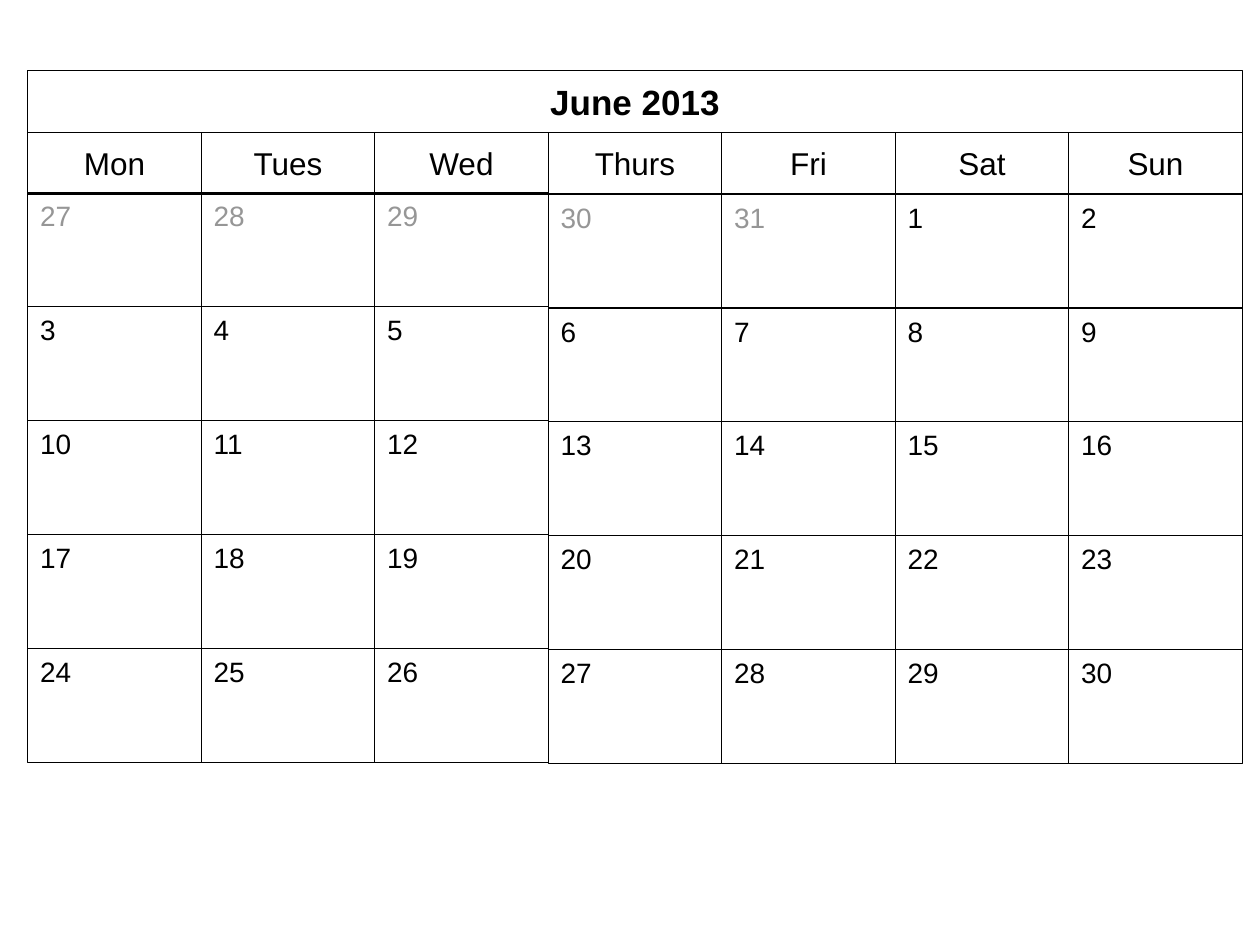
from dataclasses import dataclass
from pptx import Presentation
from pptx.dml.color import RGBColor
from pptx.enum.shapes import MSO_SHAPE
from pptx.enum.text import MSO_ANCHOR, MSO_AUTO_SIZE, PP_ALIGN
from pptx.util import Inches, Pt


@dataclass(frozen=True)
class Theme:
    font: str = "Arial"
    ink: RGBColor = RGBColor(0, 0, 0)
    muted: RGBColor = RGBColor(0x96, 0x96, 0x96)
    paper: RGBColor = RGBColor(255, 255, 255)
    title_size: int = 20
    weekday_size: int = 18
    day_size: int = 16
    line_width: float = 0.75


@dataclass(frozen=True)
class Box:
    left: float
    top: float
    width: float
    height: float

    def cell(self, row, col, rows, cols):
        w, h = self.width / cols, self.height / rows
        return Box(self.left + col * w, self.top + row * h, w, h)

    def shifted(self, dy):
        return Box(self.left, self.top + dy, self.width, self.height)


THEME = Theme()
WEEKDAYS = ["Mon", "Tues", "Wed", "Thurs", "Fri", "Sat", "Sun"]
DAYS = [*range(27, 32), *range(1, 31)]
LEADING_DAYS = 5
WEEKS = len(DAYS) // len(WEEKDAYS)
STEP_COLUMN = 3
STEP = 0.01


def place(sp, box):
    sp.left, sp.top = Inches(box.left), Inches(box.top)
    sp.width, sp.height = Inches(box.width), Inches(box.height)


def format_cell(sp, text, size, color=THEME.ink, bold=False, header=False):
    sp.line.color.rgb = THEME.ink
    sp.line.width = Pt(THEME.line_width)
    tf = sp.text_frame
    tf.text = text
    tf.word_wrap = True
    tf.auto_size = MSO_AUTO_SIZE.NONE
    tf.margin_left = tf.margin_right = Inches(0.1)
    tf.margin_top = tf.margin_bottom = Inches(0.02 if header else 0.05)
    tf.vertical_anchor = MSO_ANCHOR.MIDDLE if header else MSO_ANCHOR.TOP
    if header:
        sp.fill.solid()
        sp.fill.fore_color.rgb = THEME.paper
    else:
        sp.fill.background()
    p = tf.paragraphs[0]
    p.alignment = PP_ALIGN.CENTER if header else PP_ALIGN.LEFT
    font = p.runs[0].font
    font.name, font.size, font.bold = THEME.font, Pt(size), bold
    font.color.rgb = color


def add_cell(slide, box, text, size, **style):
    sp = slide.shapes.add_shape(MSO_SHAPE.RECTANGLE, 0, 0, 0, 0)
    sp.shadow.inherit = False
    place(sp, box)
    format_cell(sp, text, size, **style)


def add_month(slide, box):
    sp = slide.shapes.title
    place(sp, box)
    format_cell(sp, "June 2013", THEME.title_size, bold=True, header=True)


def add_weekdays(slide, box):
    for col, name in enumerate(WEEKDAYS):
        add_cell(slide, box.cell(0, col, 1, len(WEEKDAYS)), name,
                 THEME.weekday_size, header=True)


def add_days(slide, box):
    for i, day in enumerate(DAYS):
        row, col = divmod(i, len(WEEKDAYS))
        cell = box.cell(row, col, WEEKS, len(WEEKDAYS))
        if col >= STEP_COLUMN:
            cell = cell.shifted(STEP)
        add_cell(slide, cell, str(day), THEME.day_size,
                 color=THEME.muted if i < LEADING_DAYS else THEME.ink)


def add_calendar(slide, box):
    head = 0.49
    add_month(slide, Box(box.left, box.top, box.width, head))
    add_weekdays(slide, Box(box.left, box.top + head, box.width, head))
    body_top = 2 * head - STEP
    add_days(slide, Box(box.left, box.top + body_top, box.width,
                        box.height - body_top - STEP))


def main():
    prs = Presentation()
    prs.slide_width, prs.slide_height = Inches(10), Inches(7.5)
    slide = prs.slides.add_slide(prs.slide_layouts[5])
    add_calendar(slide, Box(0.22, 0.56, 9.64, 5.5))
    prs.save("out.pptx")


if __name__ == "__main__":
    main()
